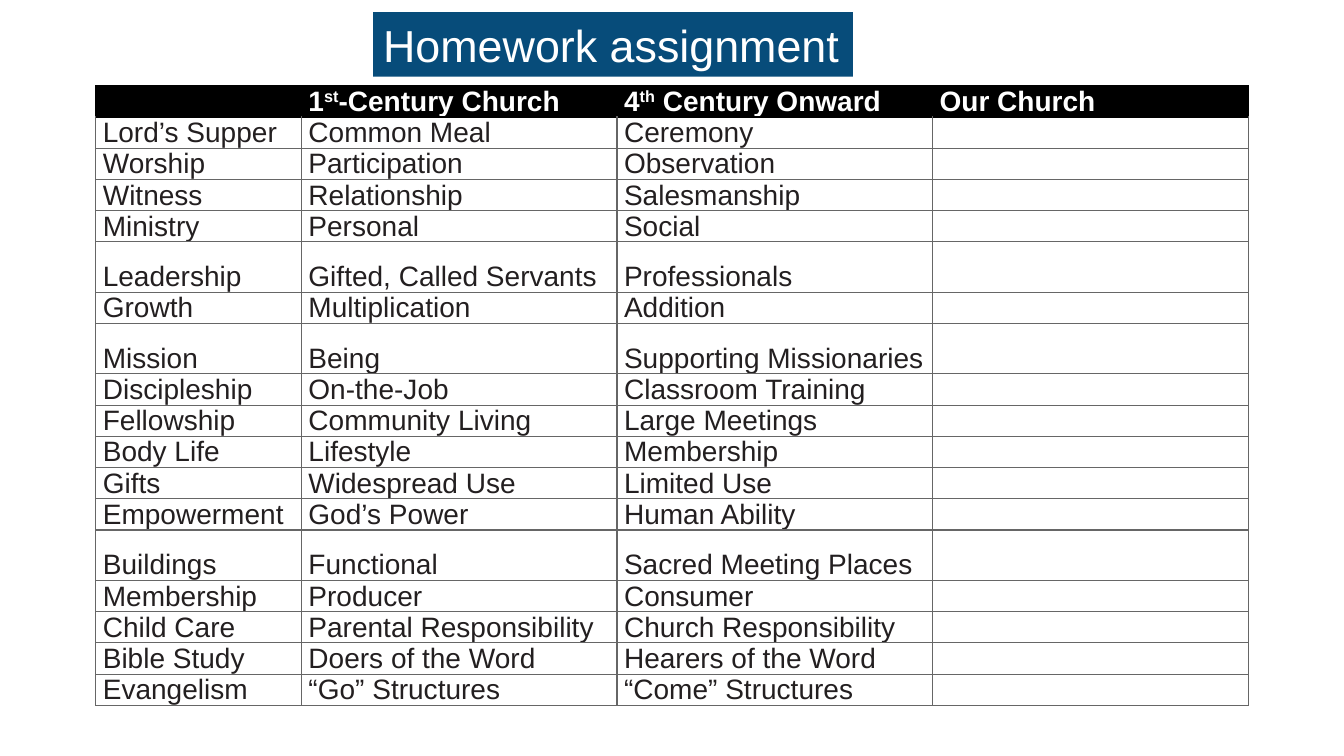
from lxml.etree import SubElement
from pptx import Presentation
from pptx.dml.color import RGBColor
from pptx.enum.text import MSO_ANCHOR, MSO_AUTO_SIZE, PP_ALIGN
from pptx.oxml.ns import qn
from pptx.util import Inches, Pt

BLACK = RGBColor(0x00, 0x00, 0x00)
WHITE = RGBColor(0xFF, 0xFF, 0xFF)
GREY = RGBColor(0x66, 0x66, 0x66)
INK = RGBColor(0x23, 0x1F, 0x20)
BLUE = RGBColor(0x07, 0x4C, 0x7A)

FONT = "Arial"
COLUMN_WIDTHS = [2.04, 3.13, 3.13, 3.13]
ROW_HEIGHT = 0.31
TALL_ROW_HEIGHT = 0.5
TALL_ROWS = {"Leadership", "Mission", "Buildings"}

HEADERS = [
    [],
    [("1", False), ("st", True), ("-Century Church", False)],
    [("4", False), ("th", True), (" Century Onward", False)],
    [("Our Church", False)],
]
TOPICS = [
    ("Lord’s Supper", "Common Meal", "Ceremony"),
    ("Worship", "Participation", "Observation"),
    ("Witness", "Relationship", "Salesmanship"),
    ("Ministry", "Personal", "Social"),
    ("Leadership", "Gifted, Called Servants", "Professionals"),
    ("Growth", "Multiplication", "Addition"),
    ("Mission", "Being", "Supporting Missionaries"),
    ("Discipleship", "On-the-Job", "Classroom Training"),
    ("Fellowship", "Community Living", "Large Meetings"),
    ("Body Life", "Lifestyle", "Membership"),
    ("Gifts", "Widespread Use", "Limited Use"),
    ("Empowerment", "God’s Power", "Human Ability"),
    ("Buildings", "Functional", "Sacred Meeting Places"),
    ("Membership", "Producer", "Consumer"),
    ("Child Care", "Parental Responsibility", "Church Responsibility"),
    ("Bible Study", "Doers of the Word", "Hearers of the Word"),
    ("Evangelism", "“Go” Structures", "“Come” Structures"),
]


def style_span(span, size, color, bold=False):
    span.font.name = FONT
    span.font.size = Pt(size)
    span.font.bold = bold
    span.font.color.rgb = color


def set_borders(cell, left, right, top, bottom):
    properties = cell._tc.get_or_add_tcPr()
    sides = {"a:lnL": left, "a:lnR": right, "a:lnT": top, "a:lnB": bottom}
    for tag, color in sides.items():
        line = SubElement(properties, qn(tag), w=str(Pt(1)))
        if color is None:
            SubElement(line, qn("a:noFill"))
        else:
            fill = SubElement(line, qn("a:solidFill"))
            SubElement(fill, qn("a:srgbClr"), val=str(color))


def style_cell(cell, fill_color):
    cell.margin_left = cell.margin_right = Inches(0.07)
    cell.margin_top = cell.margin_bottom = 0
    cell.vertical_anchor = MSO_ANCHOR.BOTTOM
    cell.text_frame.paragraphs[0].line_spacing = 0.9
    cell.fill.solid()
    cell.fill.fore_color.rgb = fill_color


def fill_header(cells):
    last = len(HEADERS) - 1
    for index, (cell, parts) in enumerate(zip(cells, HEADERS)):
        for text, raised in parts:
            span = cell.text_frame.paragraphs[0].add_run()
            span.text = text
            style_span(span, 20, WHITE, bold=True)
            if raised:
                span.font._element.set("baseline", "30000")
        set_borders(cell, BLACK if index == 0 else None,
                    BLACK if index == last else None, BLACK, BLACK)
        style_cell(cell, BLACK)


def fill_topic(cells, texts, top_color):
    for cell, text in zip(cells, (*texts, "")):
        if text:
            cell.text_frame.text = text
            style_span(cell.text_frame.paragraphs[0].runs[0], 20, INK)
        set_borders(cell, GREY, GREY, top_color, GREY)
        style_cell(cell, WHITE)


def add_comparison_table(slide):
    heights = [ROW_HEIGHT] + [
        TALL_ROW_HEIGHT if topic[0] in TALL_ROWS else ROW_HEIGHT for topic in TOPICS]
    frame = slide.shapes.add_table(
        len(heights), len(COLUMN_WIDTHS), Inches(0.95), Inches(0.85),
        Inches(sum(COLUMN_WIDTHS)), Inches(sum(heights)))
    table = frame.table
    table.horz_banding = False
    for column, width in zip(table.columns, COLUMN_WIDTHS):
        column.width = Inches(width)
    for row, height in zip(table.rows, heights):
        row.height = Inches(height)
    header, *body = table.rows
    fill_header(header.cells)
    for index, (row, topic) in enumerate(zip(body, TOPICS)):
        fill_topic(row.cells, topic, BLACK if index == 0 else GREY)


def format_title(title):
    title.left, title.top = Inches(3.7), Inches(0.12)
    title.width, title.height = Inches(4.76), Inches(0.64)
    title.fill.solid()
    title.fill.fore_color.rgb = BLUE
    frame = title.text_frame
    frame.text = "Homework assignment"
    frame.word_wrap = False
    frame.auto_size = MSO_AUTO_SIZE.NONE
    frame.vertical_anchor = MSO_ANCHOR.MIDDLE
    para = frame.paragraphs[0]
    para.alignment = PP_ALIGN.LEFT
    style_span(para.runs[0], 32, WHITE)


def main():
    deck = Presentation()
    deck.slide_width, deck.slide_height = Inches(13.33), Inches(7.5)
    slide = deck.slides.add_slide(deck.slide_layouts[5])
    add_comparison_table(slide)
    format_title(slide.shapes.title)
    deck.save("out.pptx")


if __name__ == "__main__":
    main()
